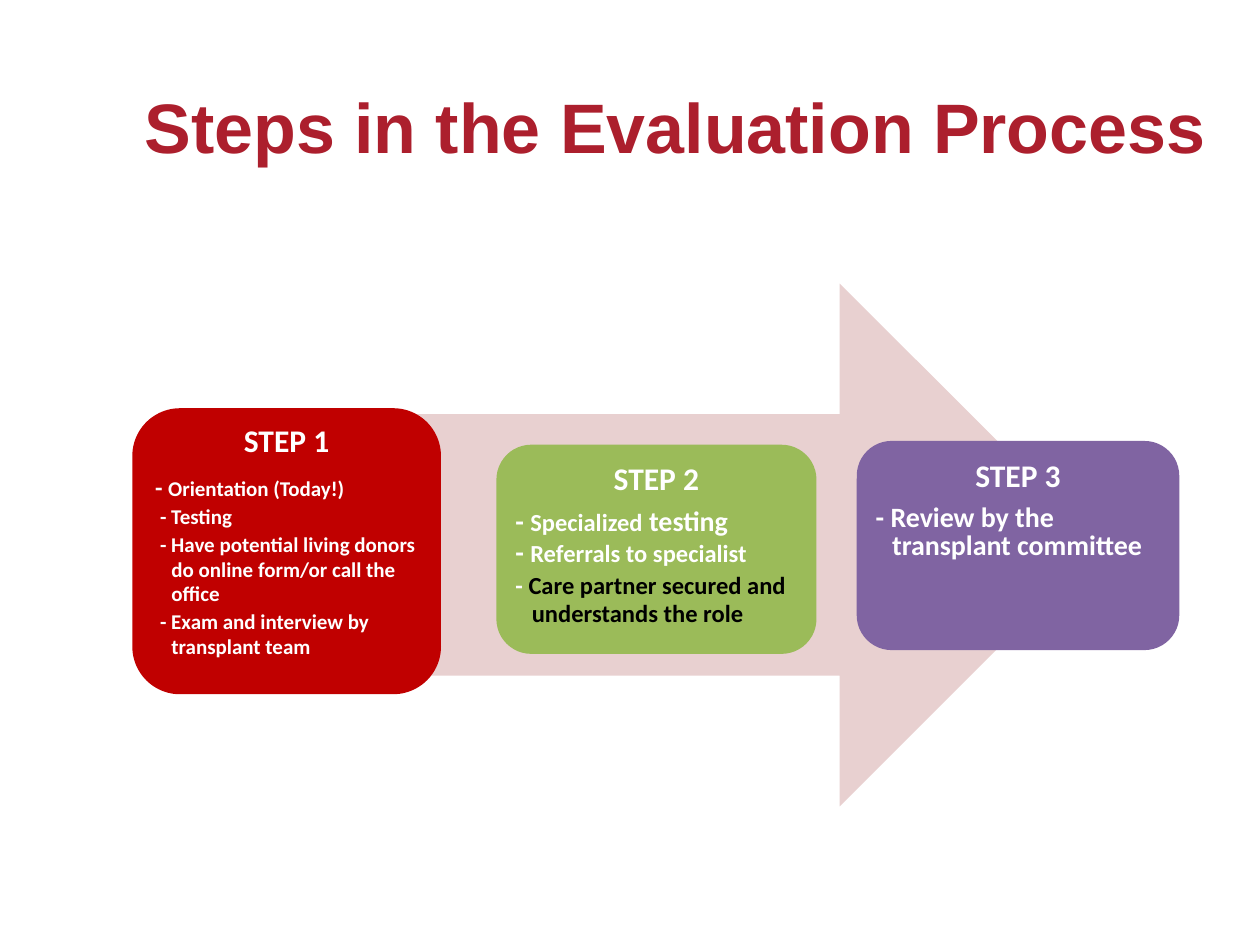
from pptx import Presentation
from pptx.dml.color import RGBColor
from pptx.enum.shapes import MSO_SHAPE as SHAPE
from pptx.enum.text import MSO_ANCHOR as ANCHOR, PP_ALIGN as ALIGN
from pptx.util import Inches, Pt

CRIMSON = RGBColor(0xAC, 0x1F, 0x2D)
PINK = RGBColor(0xE8, 0xD0, 0xD0)
RED = RGBColor(0xC0, 0x00, 0x00)
GREEN = RGBColor(0x9B, 0xBB, 0x59)
PURPLE = RGBColor(0x80, 0x64, 0xA2)
WHITE = RGBColor(0xFF, 0xFF, 0xFF)
BLACK = RGBColor(0x00, 0x00, 0x00)

STEPS = [
    dict(box=(1.05, 3.24, 2.45, 2.27), fill=RED, title="STEP 1",
         title_line=Pt(16), title_after=10, item_line=14, hang=0.09,
         items=[[("- ", 14), ("Orientation (Today!)", 12)],
                [("- Testing", 12)],
                [("- Have potential living donors do online form/or call the office", 12)],
                [("- Exam and interview by transplant team", 12)]]),
    dict(box=(3.94, 3.53, 2.54, 1.66), fill=GREEN, title="STEP 2",
         items=[[("- ", 16), ("Specialized", 14), (" testing", 16)],
                [("- ", 16), ("Referrals to specialist", 14)],
                [("- ", 14), ("Care partner secured and understands the role", 14, BLACK)]]),
    dict(box=(6.8, 3.5, 2.56, 1.66), fill=PURPLE, title="STEP 3",
         items=[[("- Review by the transplant committee", 16)]]),
]


def add_text(p, text, size, color=WHITE, font="Calibri", bold=True):
    """Append a formatted run to a paragraph."""
    r = p.add_run()
    r.text = text
    r.font.name, r.font.size, r.font.bold = font, Pt(size), bold
    r.font.color.rgb = color


def set_frame(tf, anchor, side, top):
    """Set wrapping, anchor and margins of a text frame."""
    tf.word_wrap = True
    tf.vertical_anchor = anchor
    tf.margin_left = tf.margin_right = Inches(side)
    tf.margin_top = tf.margin_bottom = Inches(top)


def add_block(s, kind, box, fill):
    """Draw a flat filled shape in the given box."""
    sp = s.shapes.add_shape(kind, *map(Inches, box))
    sp.shadow.inherit = False
    sp.fill.solid()
    sp.fill.fore_color.rgb = fill
    sp.line.fill.background()
    return sp


def add_title(s, box, text):
    """Place the slide title in the given box."""
    tf = s.shapes.add_textbox(*map(Inches, box)).text_frame
    set_frame(tf, ANCHOR.BOTTOM, 0.1, 0)
    p = tf.paragraphs[0]
    p.line_spacing = 0.9
    add_text(p, text, 40, color=CRIMSON, font="Arial")


def add_step(s, box, fill, title, items, title_line=0.9, title_after=6.3,
             item_line=16, hang=0.13):
    """Place a step card with its heading and hanging list."""
    tf = add_block(s, SHAPE.ROUNDED_RECTANGLE, box, fill).text_frame
    set_frame(tf, ANCHOR.TOP, 0.07, 0.07)
    p = tf.paragraphs[0]
    p.alignment = ALIGN.CENTER
    p.line_spacing = title_line
    p.space_after = Pt(title_after)
    add_text(p, title, 18)
    for i, runs in enumerate(items):
        p = tf.add_paragraph()
        p.alignment = ALIGN.LEFT
        p.line_spacing = Pt(item_line)
        p.space_after = Pt(2)
        pPr = p._p.get_or_add_pPr()
        pPr.set("marL", str(Inches(0.13)))
        pPr.set("indent", str(-Inches(hang if i else 0.13)))
        for run in runs:
            add_text(p, *run)


def main():
    """Build the slide and save it."""
    prs = Presentation()
    prs.slide_width, prs.slide_height = Inches(10), Inches(7.5)
    s = prs.slides.add_slide(prs.slide_layouts[6])
    add_title(s, (1.05, 0.42, 8.95, 0.92), "Steps in the Evaluation Process")
    add_block(s, SHAPE.RIGHT_ARROW, (1.67, 2.25, 7.07, 4.15), PINK)
    for step in STEPS:
        add_step(s, **step)
    prs.save("out.pptx")


if __name__ == "__main__":
    main()
